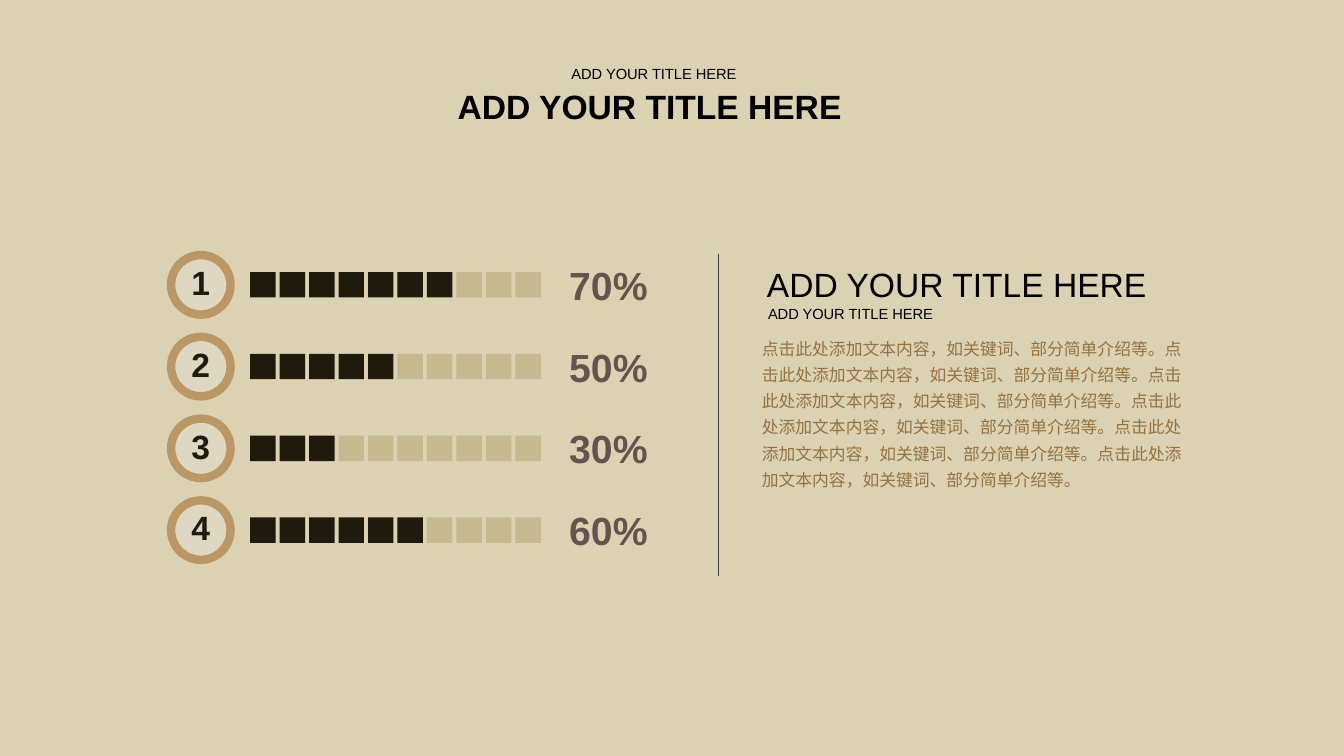
from lxml import etree
from pptx import Presentation
from pptx.dml.color import RGBColor
from pptx.enum import shapes, text
from pptx.oxml.ns import qn
from pptx.util import Pt

COLORS = {
    "background": "DBD1B3",
    "black": "000000",
    "dark": "1E1A0D",
    "empty": "968440",
    "badge": "E7E6E6",
    "ring": "BB9763",
    "percent": "62554E",
    "divider": "404040",
    "body": "957341",
}
HEADING = "ADD YOUR TITLE HERE"
BODY = "点击此处添加文本内容，如关键词、部分简单介绍等。" * 6
PERCENTAGES = [70, 50, 30, 60]
ROW_PITCH = 58.4
SQUARES = 10
SQUARE_SIZE = 18.2
SQUARE_PITCH = 21.05


def rgb(name):
    return RGBColor.from_string(COLORS[name])


def write(sp, content, size, color, bold=False, spacing=1.0,
          align=text.PP_ALIGN.LEFT, anchor=text.MSO_ANCHOR.TOP, wrap=True):
    tf = sp.text_frame
    tf.auto_size = text.MSO_AUTO_SIZE.NONE
    tf.word_wrap = wrap
    tf.vertical_anchor = anchor
    p = tf.paragraphs[0]
    p.alignment = align
    p.line_spacing = spacing
    p.space_before = Pt(0)
    r = p.add_run()
    r.text = content
    r.font.name = "Arial"
    r.font.size = Pt(size)
    r.font.bold = bold
    r.font.color.rgb = rgb(color)


def add_text(s, x, y, w, h, content, size, color, **style):
    sp = s.shapes.add_textbox(Pt(x), Pt(y), Pt(w), Pt(h))
    write(sp, content, size, color, **style)


def add_filled(s, kind, x, y, size, color, opacity=100):
    sp = s.shapes.add_shape(kind, Pt(x), Pt(y), Pt(size), Pt(size))
    sp.shadow.inherit = False
    sp.fill.solid()
    sp.fill.fore_color.rgb = rgb(color)
    sp.line.fill.background()
    if opacity < 100:
        fill = sp.fill._xPr.find(qn("a:solidFill"))
        etree.SubElement(fill[0], qn("a:alpha"), val=str(opacity * 1000))
    return sp


def add_header(s, x, y, w):
    title = s.shapes.title
    title.left, title.top, title.width, title.height = Pt(x), Pt(y + 17.3), Pt(w), Pt(31)
    write(title, HEADING, 24, "black", bold=True, spacing=0.9)
    add_text(s, x + 81.4, y, 134, 13, HEADING, 10.5, "black", spacing=0.9)


def add_progress_row(s, x, y, h, number, percent):
    badge = add_filled(s, shapes.MSO_SHAPE.OVAL, x, y, h, "badge", 30)
    badge.line.color.rgb = rgb("ring")
    badge.line.width = Pt(6)
    write(badge, str(number), 24, "dark", bold=True, spacing=0.9,
          align=text.PP_ALIGN.CENTER, anchor=text.MSO_ANCHOR.MIDDLE)
    for i in range(SQUARES):
        color, opacity = ("dark", 100) if i < percent * SQUARES / 100 else ("empty", 30)
        add_filled(s, shapes.MSO_SHAPE.RECTANGLE, x + 56.5 + i * SQUARE_PITCH,
                   y + (h - SQUARE_SIZE) / 2, SQUARE_SIZE, color, opacity)
    add_text(s, x + 277.3, y + 0.8, 71.3, 41, f"{percent}%", 28, "percent",
             bold=True, wrap=False)


def add_progress_rows(s, x, y):
    for i, percent in enumerate(PERCENTAGES):
        add_progress_row(s, x, y + i * ROW_PITCH, 42.5, i + 1, percent)


def add_divider(s, x, y, h):
    line = s.shapes.add_connector(shapes.MSO_CONNECTOR.STRAIGHT,
                                  Pt(x), Pt(y), Pt(x), Pt(y + h))
    line.line.color.rgb = rgb("divider")
    line.line.width = Pt(1)
    etree.SubElement(line._element.spPr, qn("a:effectLst"))


def add_description(s, x, y, w):
    add_text(s, x + 3.6, y, 293, 36, HEADING, 24, "black")
    add_text(s, x + 4.4, y + 29.5, 140, 21, HEADING, 10.5, "black")
    add_text(s, x, y + 49, w, 121, BODY, 12, "body", spacing=1.3)


def main():
    prs = Presentation()
    prs.slide_width, prs.slide_height = Pt(960), Pt(540)
    s = prs.slides.add_slide(prs.slide_layouts[5])
    s.background.fill.solid()
    s.background.fill.fore_color.rgb = rgb("background")
    add_header(s, 319.7, 43.9, 293)
    add_progress_rows(s, 122.2, 182.2)
    add_divider(s, 513.2, 181.5, 230)
    add_description(s, 537.1, 185, 324.7)
    prs.save("out.pptx")


if __name__ == "__main__":
    main()
